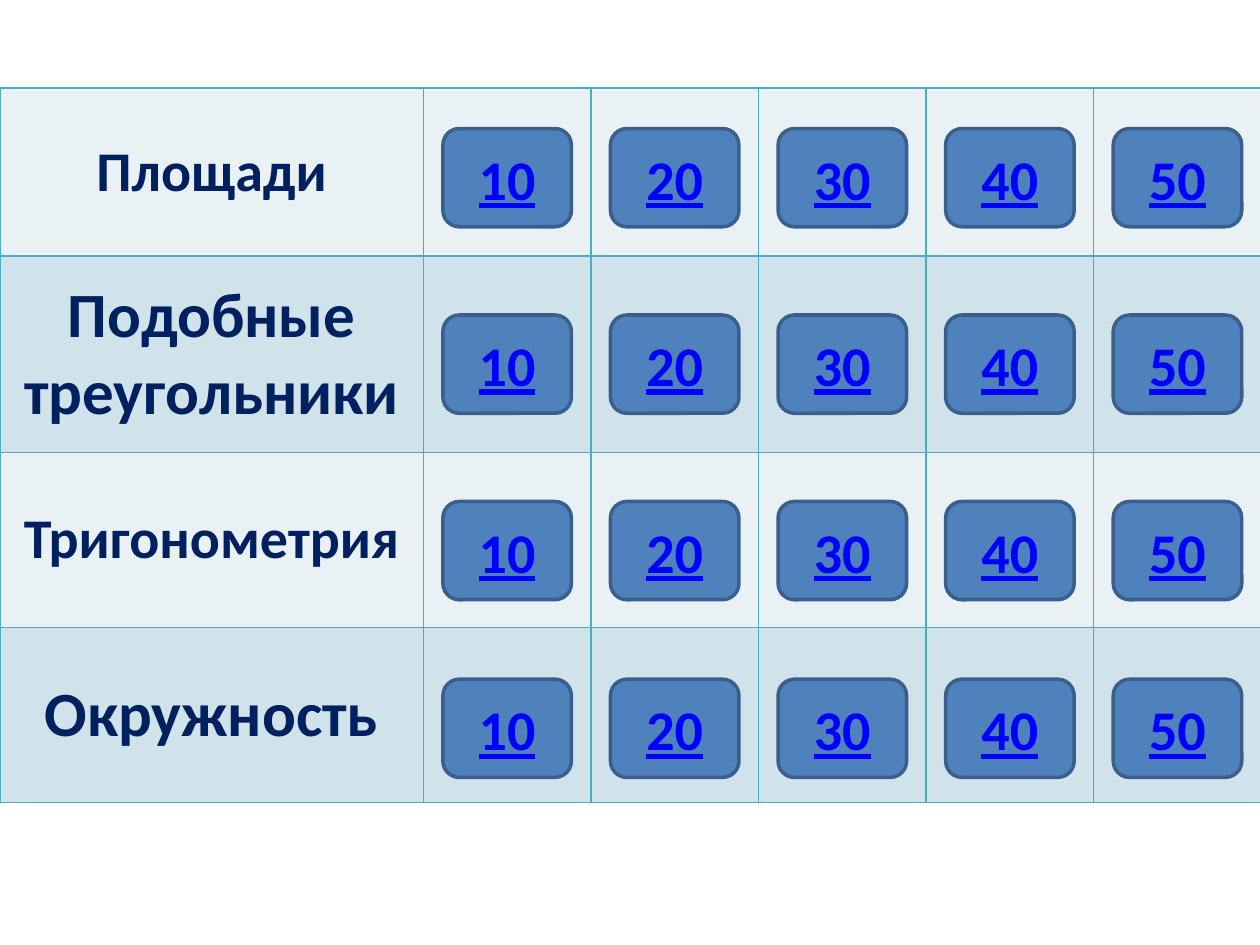
from dataclasses import dataclass

from lxml.etree import SubElement
from pptx import Presentation
from pptx.dml.color import RGBColor
from pptx.enum.shapes import MSO_SHAPE as Shape
from pptx.enum.text import MSO_ANCHOR as Anchor, PP_ALIGN as Align
from pptx.oxml.ns import qn
from pptx.util import Inches, Pt


@dataclass(frozen=True)
class Theme:
    font: str = "Calibri"
    topic: str = "002060"
    points: str = "0000FF"
    button: str = "4F81BD"
    button_line: str = "3A5F8C"
    border: str = "4BACC6"
    bands: tuple = ("E9F1F5", "D0E3EA")
    normal: int = 32
    large: int = 36
    border_width: float = 1
    button_line_width: float = 2


THEME = Theme()
SLIDE_W, SLIDE_H = 10, 7.5
BOARD_TOP = 0.7
TOPIC_W, POINTS_W = 3.36, 1.33
BUTTON_W, BUTTON_H = 1.02, 0.78
POINTS = (10, 20, 30, 40, 50)
# topic, type size, row height, space from row top to button
ROWS = (
    ("Площади", THEME.normal, 1.33, 0.32),
    ("Подобные треугольники", THEME.large, 1.56, 0.47),
    ("Тригонометрия", THEME.normal, 1.39, 0.39),
    ("Окружность", THEME.large, 1.39, 0.41),
)


def write(tf, text, *, size, color, font=THEME.font, bold=True, underline=False):
    p = tf.paragraphs[0]
    p.alignment = Align.CENTER
    r = p.add_run()
    r.text = text
    r.font.name, r.font.size = font, Pt(size)
    r.font.bold, r.font.underline = bold, underline
    r.font.color.rgb = RGBColor.from_string(color)


def paint(fill, color):
    fill.solid()
    fill.fore_color.rgb = RGBColor.from_string(color)


def add_borders(cell, color, width):
    """Put the four side lines ahead of the cell's fill, as the schema asks."""
    tc_pr = cell._tc.get_or_add_tcPr()
    for i, side in enumerate(("a:lnL", "a:lnR", "a:lnT", "a:lnB")):
        ln = SubElement(tc_pr, qn(side), w=str(Pt(width)))
        fill = SubElement(ln, qn("a:solidFill"))
        SubElement(fill, qn("a:srgbClr"), val=color)
        tc_pr.insert(i, ln)


class QuizBoard:
    """Holds the theme, the slide and the grid of topics and points."""

    def __init__(self, slide, theme):
        self.slide, self.theme = slide, theme
        self.widths = [TOPIC_W] + [POINTS_W] * len(POINTS)
        self.heights = [height for _, _, height, _ in ROWS]

    def table(self):
        frame = self.slide.shapes.add_table(
            len(self.heights), len(self.widths), 0, Inches(BOARD_TOP),
            Inches(sum(self.widths)), Inches(sum(self.heights)))
        table = frame.table
        for column, width in zip(table.columns, self.widths):
            column.width = Inches(width)
        for i, (row, height) in enumerate(zip(table.rows, self.heights)):
            row.height = Inches(height)
            for cell in row.cells:
                paint(cell.fill, self.theme.bands[i % 2])
                add_borders(cell, self.theme.border, self.theme.border_width)
        return table

    def topic(self, cell, text, size):
        cell.vertical_anchor = Anchor.MIDDLE
        write(cell.text_frame, text, size=size, color=self.theme.topic)

    def button(self, row, col, text, drop):
        """Centre a button in its column, drop inches below the row's top."""
        left = sum(self.widths[:col]) + (self.widths[col] - BUTTON_W) / 2
        top = BOARD_TOP + sum(self.heights[:row]) + drop
        sp = self.slide.shapes.add_shape(
            Shape.ROUNDED_RECTANGLE, Inches(left), Inches(top),
            Inches(BUTTON_W), Inches(BUTTON_H))
        sp.shadow.inherit = False
        paint(sp.fill, self.theme.button)
        paint(sp.line.fill, self.theme.button_line)
        sp.line.width = Pt(self.theme.button_line_width)
        sp.text_frame.vertical_anchor = Anchor.MIDDLE
        write(sp.text_frame, text, size=self.theme.normal,
              color=self.theme.points, underline=True)


def main():
    prs = Presentation()
    prs.slide_width, prs.slide_height = Inches(SLIDE_W), Inches(SLIDE_H)
    board = QuizBoard(prs.slides.add_slide(prs.slide_layouts[6]), THEME)
    table = board.table()
    for row, (text, size, _, drop) in enumerate(ROWS):
        board.topic(table.cell(row, 0), text, size)
        for col, value in enumerate(POINTS, start=1):
            board.button(row, col, str(value), drop)
    prs.save("out.pptx")


if __name__ == "__main__":
    main()
